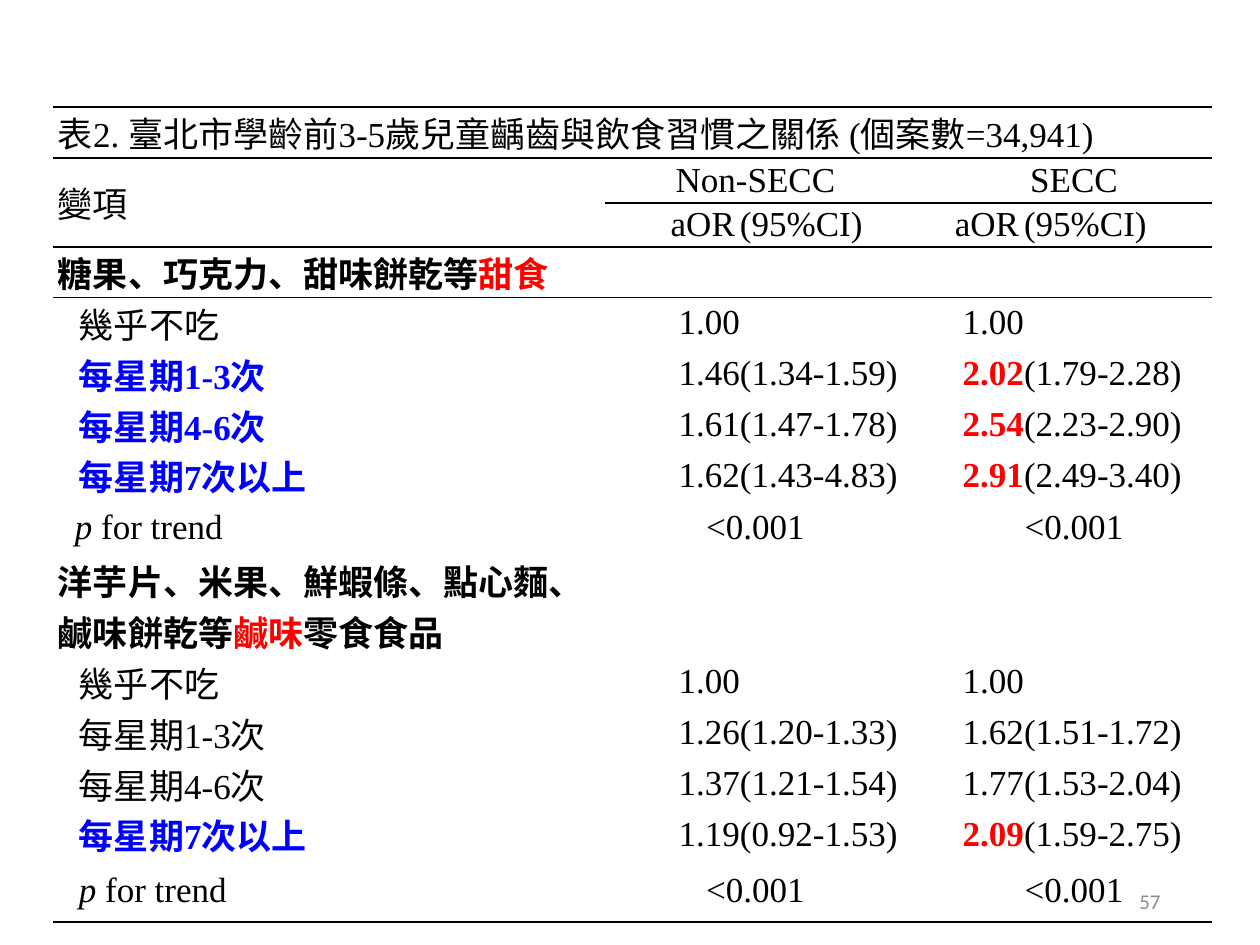
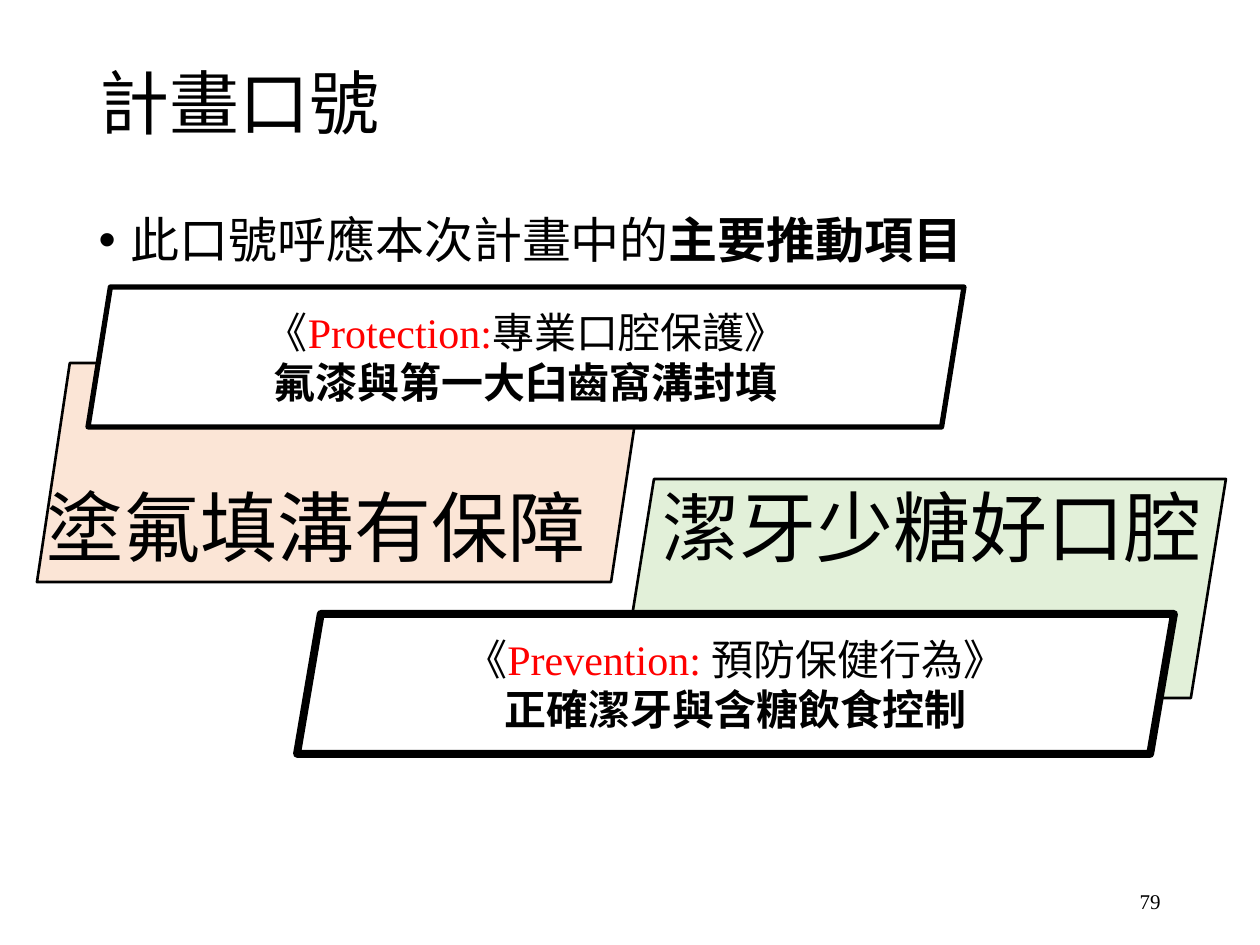
import pptx
import pptx.util
import pptx.dml.color
import pptx.enum.shapes
import pptx.enum.text
import pptx.oxml
import pptx.oxml.ns
from lxml import etree

RGB = pptx.dml.color.RGBColor
BLACK = RGB(0x00, 0x00, 0x00)
WHITE = RGB(0xFF, 0xFF, 0xFF)
RED = RGB(0xFF, 0x00, 0x00)
BLUE = RGB(0x00, 0x00, 0xFF)
GRAY = RGB(0x8C, 0x8C, 0x8C)
PEACH = RGB(0xFB, 0xE5, 0xD6)
GREEN = RGB(0xE2, 0xF0, 0xD9)

SERIF = "Times New Roman"
SANS = "Noto Sans CJK SC"
ALIGN = pptx.enum.text.PP_ALIGN
MIDDLE = pptx.enum.text.MSO_ANCHOR.MIDDLE
PLAIN_TABLE = "{2D5ABB26-0587-4C30-8999-92F81FD0307C}"

COLS = [552, 135, 166, 18, 88, 188]
LABEL, LEFT, GAP, RIGHT = 0, 1, 3, 4
PAIRS = (LEFT, RIGHT)
ROW = 39
TALL = {1: 45, 2: 44, 8: 54, 9: 77, 14: 62}
INDENT = 21
NEVER = ("幾乎不吃", "1.00", "", "1.00", "", False)
# label, non-SECC odds, interval, SECC odds, interval, stressed
SWEET = [
    NEVER,
    ("每星期1-3次", "1.46", "(1.34-1.59)", "2.02", "(1.79-2.28)", True),
    ("每星期4-6次", "1.61", "(1.47-1.78)", "2.54", "(2.23-2.90)", True),
    ("每星期7次以上", "1.62", "(1.43-4.83)", "2.91", "(2.49-3.40)", True),
]
SALTY = [
    NEVER,
    ("每星期1-3次", "1.26", "(1.20-1.33)", "1.62", "(1.51-1.72)", False),
    ("每星期4-6次", "1.37", "(1.21-1.54)", "1.77", "(1.53-2.04)", False),
    ("每星期7次以上", "1.19", "(0.92-1.53)", "2.09", "(1.59-2.75)", True),
]


def px(*sizes):
    """Turn px (126 to the inch) into EMU."""
    emus = [pptx.util.Emu(round(size * 914400 / 126)) for size in sizes]
    return emus if len(emus) > 1 else emus[0]


def write(para, runs, size, name=SERIF, align=ALIGN.LEFT, color=BLACK):
    """Fill a paragraph; runs are a string or (text, font changes) pairs."""
    para.alignment = align
    font = para.font
    font.size = pptx.util.Pt(size)
    font.name = name
    font.color.rgb = color
    if isinstance(runs, str):
        runs = [(runs, {})]
    for text, style in runs:
        run = para.add_run()
        run.text = text
        for key, value in style.items():
            if key == "color":
                run.font.color.rgb = value
            else:
                setattr(run.font, key, value)


def add_text(slide, box, text, size, wrap=True, anchor=None, **style):
    frame = slide.shapes.add_textbox(*px(*box)).text_frame
    frame.word_wrap = wrap
    frame.vertical_anchor = anchor
    write(frame.paragraphs[0], text, size, **style)


def add_number(slide, text, **style):
    add_text(slide, (890, 876, 283, 50), text, 12, anchor=MIDDLE,
             align=ALIGN.RIGHT, **style)


def add_slant(slide, box, skew, fill, weight, lines=()):
    """Add a parallelogram with centred lines of text."""
    kind = pptx.enum.shapes.MSO_SHAPE.PARALLELOGRAM
    shape = slide.shapes.add_shape(kind, *px(*box))
    shape.adjustments[0] = skew
    shape.shadow.inherit = False
    shape.fill.solid()
    shape.fill.fore_color.rgb = fill
    shape.line.color.rgb = BLACK
    shape.line.width = pptx.util.Pt(weight)
    frame = shape.text_frame
    frame.vertical_anchor = MIDDLE
    for i, runs in enumerate(lines):
        para = frame.add_paragraph() if i else frame.paragraphs[0]
        write(para, runs, 24, align=ALIGN.CENTER)


def fill_cell(cell, runs, align=ALIGN.LEFT, indent=0, left=5, right=5):
    cell.margin_left, cell.margin_right = px(left, right)
    para = cell.text_frame.paragraphs[0]
    if indent:
        props = para._p.get_or_add_pPr()
        props.set("marL", str(px(indent)))
        props.set("indent", "0")
    write(para, runs, 20, align=align)


def rule(table, row, cols, side):
    """Draw a black line on one side ("T" or "B") of some cells in a row."""
    for col in cols:
        props = table.cell(row, col)._tc.get_or_add_tcPr()
        line = pptx.oxml.parse_xml(
            f'<a:ln{side} {pptx.oxml.ns.nsdecls("a")} w="12700">'
            '<a:solidFill><a:srgbClr val="000000"/></a:solidFill>'
            f'</a:ln{side}>')
        spot = sum(child.tag.endswith("}lnT") for child in props)
        props.insert(spot, line)


def join(table, row, col, rows=1, cols=2):
    cell = table.cell(row, col)
    cell.merge(table.cell(row + rows - 1, col + cols - 1))
    return cell


def fill_group(table, top, head, items, indent):
    """Fill a heading row, its item rows and the trend row."""
    fill_cell(table.cell(top, LABEL), head)
    for row, item in enumerate(items, top + 1):
        label, *values, hot = item
        mark = {"bold": True, "color": BLUE} if hot else {}
        fill_cell(table.cell(row, LABEL), [(label, mark)], indent=INDENT)
        for col, odds, span in zip(PAIRS, values[::2], values[1::2]):
            red = hot and col == RIGHT
            mark = {"bold": True, "color": RED} if red else {}
            fill_cell(table.cell(row, col), [(odds, mark)],
                      align=ALIGN.RIGHT, right=0)
            if span:
                fill_cell(table.cell(row, col + 1), span, left=0)
    last = top + len(items) + 1
    trend = [("p", {"italic": True}), (" for trend", {})]
    fill_cell(table.cell(last, LABEL), trend, indent=indent)
    for col in PAIRS:
        fill_cell(join(table, last, col), "<0.001", align=ALIGN.CENTER)


def fill_head(table):
    fill_cell(join(table, 0, LABEL, cols=len(COLS)),
              "表2. 臺北市學齡前3-5歲兒童齲齒與飲食習慣之關係 (個案數=34,941)")
    fill_cell(join(table, 1, LABEL, rows=2, cols=1), "變項")
    for col, name in zip(PAIRS, ("Non-SECC", "SECC")):
        fill_cell(join(table, 1, col), name, align=ALIGN.CENTER)
        fill_cell(table.cell(2, col), "aOR", align=ALIGN.RIGHT)
        fill_cell(table.cell(2, col + 1), "(95%CI)", left=0)


def add_odds(slide):
    count = 15
    heights = [TALL.get(row, ROW) for row in range(count)]
    box = px(53, 107, sum(COLS), sum(heights))
    table = slide.shapes.add_table(count, len(COLS), *box).table
    table.first_row = table.horz_banding = False
    table._tbl.tblPr.find(pptx.oxml.ns.qn("a:tableStyleId")).text = PLAIN_TABLE
    for col, width in zip(table.columns, COLS):
        col.width = px(width)
    for row, height in zip(table.rows, heights):
        row.height = px(height)
    for cell in table.iter_cells():
        cell.margin_top = cell.margin_bottom = 0
        cell.vertical_anchor = MIDDLE
        cell.fill.background()

    fill_head(table)
    bold = {"bold": True}
    red = {"bold": True, "color": RED}
    fill_group(table, 3, [("糖果、巧克力、甜味餅乾等", bold), ("甜食", red)],
               SWEET, 17)
    fill_group(table, 9, [("洋芋片、米果、鮮蝦條、點心麵、鹹味餅乾等", bold),
                          ("鹹味", red), ("零食食品", bold)], SALTY, INDENT)

    full = range(len(COLS))
    pairs = [col for col in full if col not in (LABEL, GAP)]
    for row, cols, side in (
            (0, full, "T"), (0, full, "B"), (1, full, "T"),
            (1, pairs, "B"), (2, pairs, "T"), (2, full, "B"),
            (3, full, "T"), (count - 1, full, "B")):
        rule(table, row, cols, side)


def place(holder, box):
    """Move a placeholder and give back its first paragraph."""
    holder.left, holder.top, holder.width, holder.height = px(*box)
    frame = holder.text_frame
    frame.auto_size = pptx.enum.text.MSO_AUTO_SIZE.NONE
    para = frame.paragraphs[0]
    para.line_spacing = 0.9
    return para


def add_slogan(slide):
    add_slant(slide, (37, 363, 607, 219), 0.15, PEACH, 1.5)
    title = place(slide.shapes.title, (87, 15, 1086, 183))
    slide.shapes.title.text_frame.vertical_anchor = MIDDLE
    write(title, "計畫口號", 40, name=SANS)

    item = place(slide.placeholders[1], (86, 210, 1086, 86))
    item.space_before = pptx.util.Pt(0)
    props = item._p.get_or_add_pPr()
    props.set("marL", str(px(32)))
    props.set("indent", str(-px(32)))
    dot = etree.SubElement(props, pptx.oxml.ns.qn("a:buChar"))
    dot.set("char", "•")
    write(item, [("此口號呼應本次計畫中的", {}),
                 ("主要推動項目", {"bold": True})], 28)

    add_number(slide, "79")
    add_slant(slide, (619, 479, 607, 219), 0.16, GREEN, 1.5)
    for box, skew, weight, term, topic, work in (
            ((297, 614, 877, 140), 0.17, 4.5, "Prevention: ",
             "預防保健行為》", "正確潔牙與含糖飲食控制"),
            ((88, 287, 876, 140), 0.16, 3, "Protection:",
             "專業口腔保護》", "氟漆與第一大臼齒窩溝封填")):
        add_slant(slide, box, skew, WHITE, weight, [
            [("《", {}), (term, {"color": RED}), (topic, {})],
            [(work, {"bold": True})]])
    add_text(slide, (34, 473, 1192, 106), "塗氟填溝有保障　潔牙少糖好口腔", 44,
             wrap=False, name=SANS)


def main():
    deck = pptx.Presentation()
    deck.slide_width, deck.slide_height = px(1260, 945)
    blank, listed = deck.slide_layouts[6], deck.slide_layouts[1]
    slide = deck.slides.add_slide(blank)
    add_odds(slide)
    add_number(slide, "57", name="Calibri", color=GRAY)
    add_slogan(deck.slides.add_slide(listed))
    deck.save("out.pptx")


if __name__ == "__main__":
    main()
